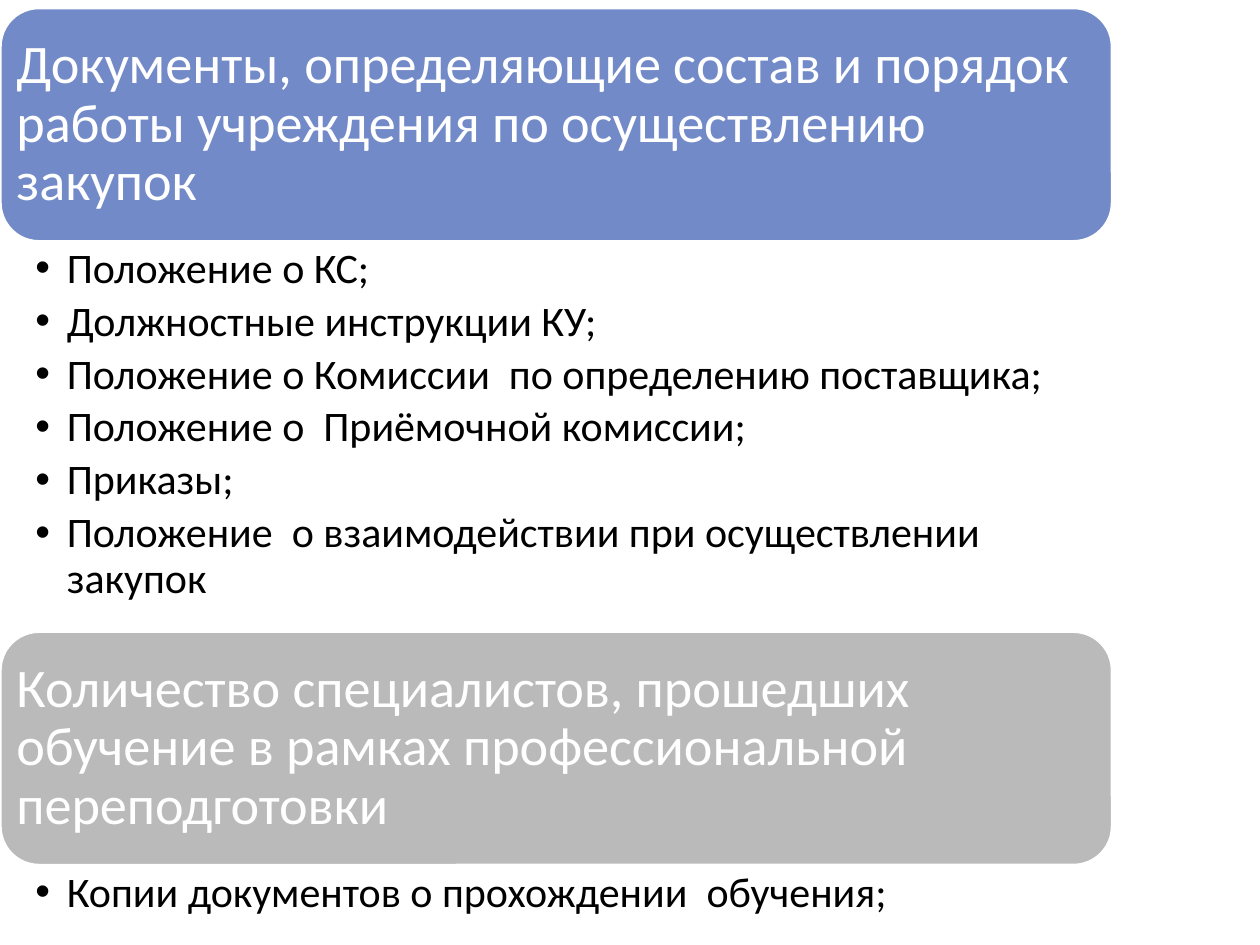
import pptx
import pptx.util
import pptx.dml.color
import pptx.enum.shapes
import pptx.enum.text
import pptx.oxml
import pptx.oxml.ns

Inches = pptx.util.Inches
Pt = pptx.util.Pt
RGBColor = pptx.dml.color.RGBColor
Anchor = pptx.enum.text.MSO_ANCHOR

BLUE = RGBColor(0x73, 0x8A, 0xC8)
GRAY = RGBColor(0xBA, 0xBA, 0xBA)
WHITE = RGBColor(0xFF, 0xFF, 0xFF)
BLACK = RGBColor(0, 0, 0)

BLOCK_WIDTH = Inches(8.83)
HEADING_HEIGHT = Inches(1.86)

HEADING_FRAME = {
    "margin_left": Inches(0.13), "margin_right": Inches(0.13),
    "margin_top": Inches(0.13), "margin_bottom": Inches(0.13),
    "vertical_anchor": Anchor.MIDDLE,
}
LIST_FRAME = {
    "margin_left": Inches(0.28), "margin_right": Inches(0.24),
    "margin_top": Inches(0.04), "margin_bottom": Inches(0.04),
    "vertical_anchor": Anchor.TOP,
}
COMMON_FRAME = {"word_wrap": True, "auto_size": pptx.enum.text.MSO_AUTO_SIZE.NONE}
COMMON_PARAGRAPH = {
    "alignment": pptx.enum.text.PP_ALIGN.LEFT,
    "line_spacing": 0.9, "space_before": Pt(0),
}
HEADING_PARAGRAPH = {"space_after": Pt(0)}
LIST_PARAGRAPH = {"level": 1, "space_after": Pt(4.3)}
HEADING_FONT = {"name": "Calibri", "size": Pt(31), "bold": False, "all_caps": False}
LIST_FONT = {"name": "Calibri", "size": Pt(24)}
HEADING_FONT.pop("all_caps")

sections = [
    (0, 2, 0.06, 3.09, BLUE,
     "Документы, определяющие состав и порядок работы учреждения по осуществлению закупок",
     ["Положение о КС;",
      "Должностные инструкции КУ;",
      "Положение о Комиссии  по определению поставщика;",
      "Положение о  Приёмочной комиссии;",
      "Приказы;",
      "Положение  о взаимодействии при осуществлении закупок"]),
    (3, 4, 5.01, 0.56, GRAY,
     "Количество специалистов, прошедших обучение в рамках профессиональной переподготовки",
     ["Копии документов о прохождении  обучения;"]),
]


def apply(target, *formats):
    for values in formats:
        for key, value in values.items():
            setattr(target, key, value)


def fill_text(holder, box, lines, frame_format, paragraph_format, font_format, color):
    apply(holder, dict(zip(("left", "top", "width", "height"), box)))
    frame = holder.text_frame
    apply(frame, COMMON_FRAME, frame_format)
    for number, line in enumerate(lines):
        paragraph = frame.add_paragraph() if number else frame.paragraphs[0]
        apply(paragraph, COMMON_PARAGRAPH, paragraph_format)
        run = paragraph.add_run()
        run.text = line
        apply(run.font, font_format)
        run.font.color.rgb = color


presentation = pptx.Presentation()
presentation.slide_width = Inches(10)
presentation.slide_height = Inches(7.5)
slide = presentation.slides.add_slide(presentation.slide_layouts[4])
holders = {item.placeholder_format.idx: item for item in slide.placeholders}
unused = holders[1].element
unused.getparent().remove(unused)

for heading_idx, list_idx, top, list_height, color, heading, documents in sections:
    heading_box = (Inches(0), Inches(top), BLOCK_WIDTH, HEADING_HEIGHT)
    panel = slide.shapes.add_shape(
        pptx.enum.shapes.MSO_SHAPE.ROUNDED_RECTANGLE, *heading_box)
    panel.shadow.inherit = False
    panel.fill.solid()
    panel.fill.fore_color.rgb = color
    panel.line.color.rgb = WHITE
    panel.line.width = Pt(2)
    holders[heading_idx].element.addprevious(panel.element)

    fill_text(holders[heading_idx], heading_box, [heading],
              HEADING_FRAME, HEADING_PARAGRAPH, HEADING_FONT, WHITE)
    list_box = (Inches(0), Inches(top) + HEADING_HEIGHT, BLOCK_WIDTH, Inches(list_height))
    fill_text(holders[list_idx], list_box, documents,
              LIST_FRAME, LIST_PARAGRAPH, LIST_FONT, BLACK)

    for paragraph in holders[list_idx].text_frame.paragraphs:
        properties = paragraph._p.get_or_add_pPr()
        properties.set("marL", str(Inches(0.25)))
        properties.set("indent", str(Inches(-0.25)))
        properties.append(pptx.oxml.parse_xml(
            f'<a:buChar {pptx.oxml.ns.nsdecls("a")} char="•"/>'))

presentation.save("out.pptx")
